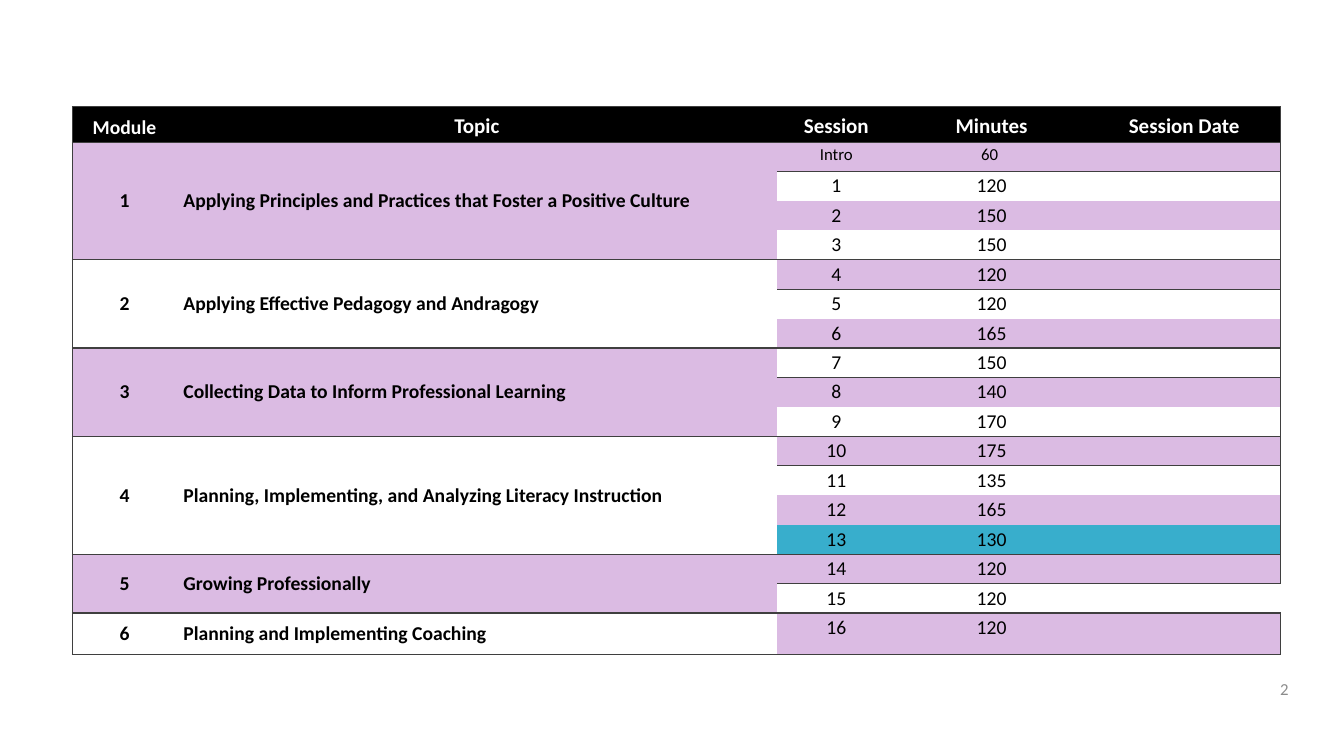
from dataclasses import dataclass

from lxml.etree import SubElement
from pptx import Presentation
from pptx.dml.color import RGBColor
from pptx.enum.text import MSO_ANCHOR as Anchor, PP_ALIGN as Align
from pptx.oxml.ns import qn
from pptx.util import Inches, Pt

HEADINGS = ["Module", "Topic", "Session", "Minutes", "Session Date"]
MODULES = [
    ("Applying Principles and Practices that Foster a Positive Culture",
     [("Intro", "60 "), ("1", "120"), ("2", "150"), ("3", "150")]),
    ("Applying Effective Pedagogy and Andragogy",
     [("4", "120"), ("5", "120"), ("6", "165")]),
    ("Collecting Data to Inform Professional Learning",
     [("7", "150"), ("8", "140"), ("9", "170")]),
    ("Planning, Implementing, and Analyzing Literacy Instruction",
     [("10", "175"), ("11", "135"), ("12", "165"), ("13", "130")]),
    ("Growing Professionally", [("14", "120"), ("15", "120")]),
    ("Planning and Implementing Coaching", [("16", "120")]),
]
HIGHLIGHTED, OPEN_EDGE = "13", "15"

# Shares of the slide, in percent
COLUMNS = [7.73, 44.71, 8.78, 14.33, 14.33]
HEADER_ROW, SESSION_ROW, LAST_ROW = 4.67, 3.87, 5.47


@dataclass(frozen=True)
class Theme:
    font: str = "Calibri"
    black: str = "000000"
    white: str = "FFFFFF"
    lilac: str = "DBBBE3"
    blue: str = "38AECC"
    rule: str = "3F3F3F"
    grey: str = "8C8C8C"
    small: int = 12
    body: int = 14
    heading: int = 15


class Deck:
    def __init__(self, theme):
        self.theme = theme
        self.prs = Presentation()
        self.prs.slide_width, self.prs.slide_height = Inches(13.33), Inches(7.5)
        self.s = self.prs.slides.add_slide(self.prs.slide_layouts[6])

    def x(self, percent):
        return round(self.prs.slide_width * percent / 100)

    def y(self, percent):
        return round(self.prs.slide_height * percent / 100)

    def set_text(self, tf, text, size, color, bold=False, align=Align.CENTER):
        tf.text = text
        p = tf.paragraphs[0]
        p.alignment = align
        for r in p.runs:
            r.font.name, r.font.size, r.font.bold = self.theme.font, Pt(size), bold
            r.font.color.rgb = RGBColor.from_string(color)
        if not text:  # keeps an empty cell from growing its row
            SubElement(p._p, qn("a:endParaRPr"), sz=str(size * 100))

    def text(self, left, top, width, height, text, size, color, align):
        box = self.s.shapes.add_textbox(
            self.x(left), self.y(top), self.x(width), self.y(height))
        tf = box.text_frame
        tf.word_wrap, tf.vertical_anchor = True, Anchor.MIDDLE
        self.set_text(tf, text, size, color, align=align)

    def table(self, left, top, columns, rows):
        frame = self.s.shapes.add_table(
            len(rows), len(columns), self.x(left), self.y(top),
            self.x(sum(columns)), self.y(sum(rows)))
        table = frame.table
        table.first_row = table.horz_banding = False
        style = table._tbl.tblPr.find(qn("a:tableStyleId"))
        style.text = "{2D5ABB26-0587-4C30-8999-92F81FD0307C}"  # no style, no grid
        for column, width in zip(table.columns, columns):
            column.width = self.x(width)
        for row, height in zip(table.rows, rows):
            row.height = self.y(height)
        return table

    def cell(self, cell, text, fill, edges, size=None, color=None, bold=False,
             align=Align.CENTER, anchor=Anchor.TOP, inset=(4.5, 2)):
        """Fill one cell; edges is any of the letters L, R, T and B."""
        th = self.theme
        cell.margin_left = cell.margin_right = Pt(inset[0])
        cell.margin_top = cell.margin_bottom = Pt(inset[1])
        cell.vertical_anchor = anchor
        self.set_text(cell.text_frame, text, size or th.body, color or th.black,
                      bold, align)
        tc_pr = cell._tc.get_or_add_tcPr()
        for side in (e for e in "LRTB" if e in edges):
            ln = SubElement(tc_pr, qn(f"a:ln{side}"), w=str(Pt(1)))
            SubElement(SubElement(ln, qn("a:solidFill")), qn("a:srgbClr"), val=th.rule)
        cell.fill.solid()
        cell.fill.fore_color.rgb = RGBColor.from_string(fill)


def add_header(deck, table):
    th = deck.theme
    for c, heading in enumerate(HEADINGS):
        edges = "TB" + {0: "L", len(HEADINGS) - 1: "R"}.get(c, "")
        deck.cell(table.cell(0, c), heading, th.black, edges,
                  th.heading if c else th.body, th.white, True, anchor=Anchor.BOTTOM)


def add_module(deck, table, number, topic, sessions, first):
    th = deck.theme
    last = first + len(sessions) - 1
    fill = th.lilac if number % 2 else th.white
    for r, (session, minutes) in enumerate(sessions, first):
        labels = (str(number), topic) if r == first else ("", "")
        deck.cell(table.cell(r, 0), labels[0], fill, "LTB" if r == first else "L",
                  bold=True, anchor=Anchor.MIDDLE, inset=(5, 0))
        deck.cell(table.cell(r, 1), labels[1], fill, "TB" if r == first else "",
                  bold=True, align=Align.LEFT, anchor=Anchor.MIDDLE, inset=(5, 2))

        band = th.lilac if r % 2 else th.white
        if session == HIGHLIGHTED:
            band = th.blue
        edges = ("T" if r == first else "") + ("B" if r == last else "")
        size = th.small if session == "Intro" else th.body
        for c, value in enumerate((session, minutes, ""), 2):
            right = "R" if c == 4 and session != OPEN_EDGE else ""
            deck.cell(table.cell(r, c), value, band, edges + right, size)
    if last > first:
        for c in (0, 1):
            table.cell(first, c).merge(table.cell(last, c))


def main():
    th = Theme()
    deck = Deck(th)
    count = sum(len(sessions) for _, sessions in MODULES)
    rows = [HEADER_ROW] + [SESSION_ROW] * (count - 1) + [LAST_ROW]
    table = deck.table(5.4, 14.13, COLUMNS, rows)
    add_header(deck, table)
    first = 1
    for number, (topic, sessions) in enumerate(MODULES, 1):
        add_module(deck, table, number, topic, sessions, first)
        first += len(sessions)
    deck.text(79.14, 89.07, 17.48, 4, "2", th.small, th.grey, Align.RIGHT)
    deck.prs.save("out.pptx")


if __name__ == "__main__":
    main()
